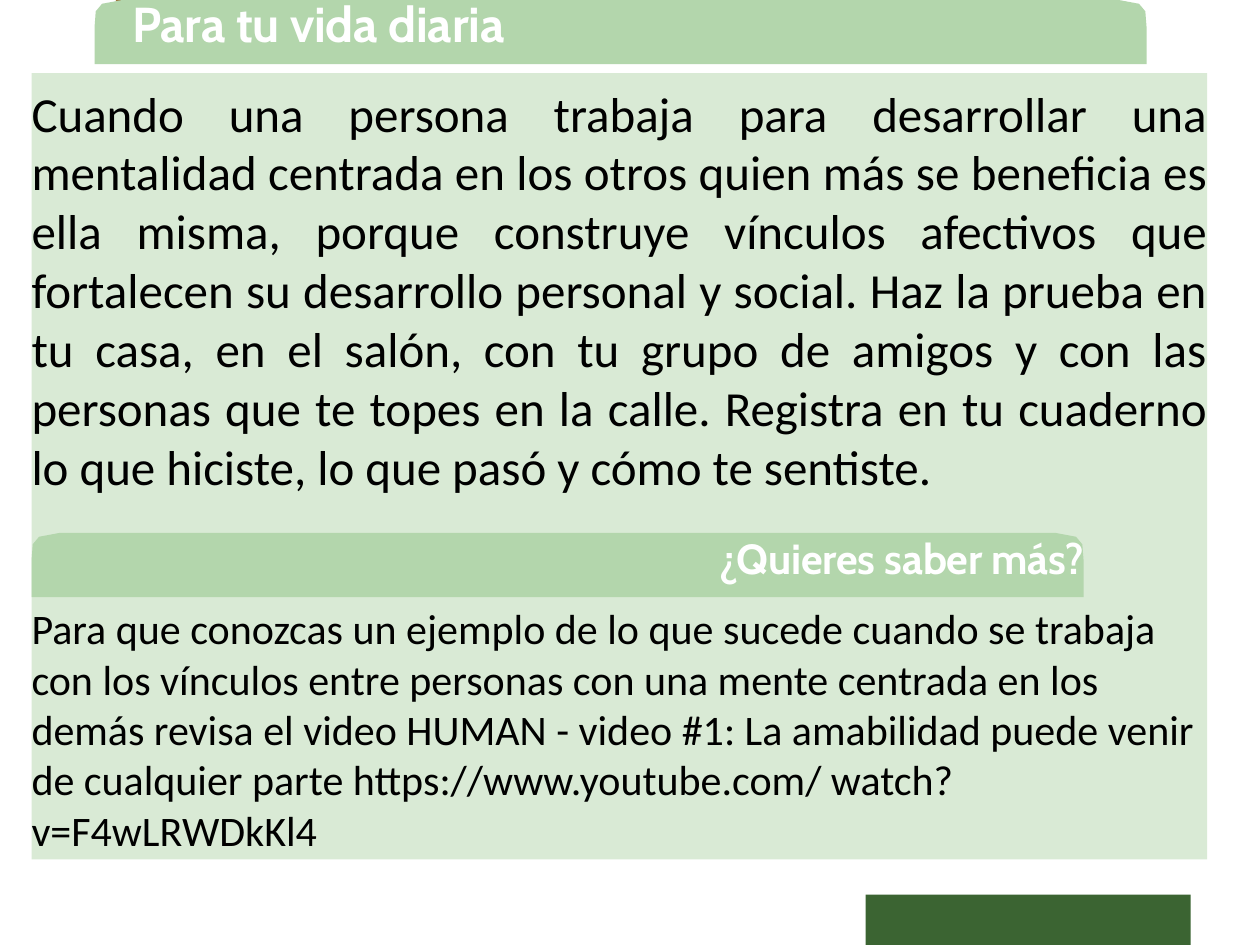
from lxml import etree
from pptx import Presentation
from pptx.dml.color import RGBColor
from pptx.enum.shapes import MSO_SHAPE
from pptx.enum.text import MSO_ANCHOR, MSO_AUTO_SIZE, PP_ALIGN
from pptx.oxml.ns import qn
from pptx.util import Inches, Pt

RECT = MSO_SHAPE.RECTANGLE
TOP, NO_FIT = MSO_ANCHOR.TOP, MSO_AUTO_SIZE.NONE
LEFT, RIGHT, JUSTIFY = PP_ALIGN.LEFT, PP_ALIGN.RIGHT, PP_ALIGN.JUSTIFY

GOLD = RGBColor(0x9A, 0x74, 0x3A)
DARK_GREEN = RGBColor(0x3B, 0x64, 0x32)
TAB_GREEN = RGBColor(0xB3, 0xD6, 0xAC)
PALE_GREEN = RGBColor(0xD9, 0xEA, 0xD5)
WHITE = RGBColor(0xFF, 0xFF, 0xFF)
BLACK = RGBColor(0, 0, 0)

# Left edge of a tab, from its bottom corner up to the flat top
TAB_EDGE = [(0, 0.51), (0, 0.22), (0.01, 0.09), (0.06, 0.03), (0.22, 0), (0.52, 0)]

DAILY_LIFE = (
    "Cuando una persona trabaja para desarrollar una mentalidad centrada en los "
    "otros quien más se beneficia es ella misma, porque construye vínculos "
    "afectivos que fortalecen su desarrollo personal y social. Haz la prueba en tu "
    "casa, en el salón, con tu grupo de amigos y con las personas que te topes en "
    "la calle. Registra en tu cuaderno lo que hiciste, lo que pasó y cómo te "
    "sentiste."
)
LEARN_MORE = (
    "Para que conozcas un ejemplo de lo que sucede cuando se trabaja con los "
    "vínculos entre personas con una mente centrada en los demás revisa el video "
    "HUMAN - video #1: La amabilidad puede venir de cualquier parte "
    "https://www.youtube.com/ watch?v=F4wLRWDkKl4"
)


def write(p, text, size, font="Calibri", color=BLACK, bold=False, align=LEFT,
          before=0, spacing=0):
    pPr = p._p.get_or_add_pPr()
    pPr.set("marL", "0")
    pPr.set("indent", "0")
    etree.SubElement(pPr, qn("a:buNone"))
    p.alignment, p.space_before = align, Pt(before)
    r = p.add_run()
    r.text = text
    r.font.size, r.font.name, r.font.bold = Pt(size), font, bold
    r.font.color.rgb = color
    if spacing:
        r._r.get_or_add_rPr().set("spc", str(round(spacing * 100)))


def set_frame(s, left=0, top=0, right=0):
    tf = s.text_frame
    tf.word_wrap, tf.auto_size, tf.vertical_anchor = True, NO_FIT, TOP
    tf.margin_left, tf.margin_top = Inches(left), Inches(top)
    tf.margin_right, tf.margin_bottom = Inches(right), 0
    return tf


def paint(s, color):
    s.shadow.inherit = False
    s.fill.solid()
    s.fill.fore_color.rgb = color
    s.line.fill.background()
    return s


def place(s, x, y, w, h):
    s.left, s.top, s.width, s.height = (Inches(v) for v in (x, y, w, h))
    s.element.getparent().append(s.element)  # bring to front


def add_strip(slide, x, y, w, h, color):
    box = (Inches(v) for v in (x, y, w, h))
    paint(slide.shapes.add_shape(RECT, *box), color)


def add_tab(slide, x, y, w):
    offsets = TAB_EDGE + [(w - dx, dy) for dx, dy in reversed(TAB_EDGE)]
    points = [(Inches(x + dx), Inches(y + dy)) for dx, dy in offsets]
    outline = slide.shapes.build_freeform(*points[0])
    outline.add_line_segments(points[1:], close=True)
    return paint(outline.convert_to_shape(), TAB_GREEN)


def add_header(slide, x, y, w):
    add_tab(slide, x, y, w)
    title = slide.shapes.title
    place(title, x + 0.28, y - 0.08, 5.63, 0.49)
    tf = set_frame(title, left=0.02, top=0.03)
    write(tf.paragraphs[0], "Para tu vida diaria", 28, font="Cabin", color=WHITE,
          bold=True, spacing=-0.1)


def add_body(slide, x, y, w, h):
    body = slide.placeholders[1]
    place(body, x, y, w, h)
    body.fill.solid()
    body.fill.fore_color.rgb = PALE_GREEN
    tf = set_frame(body, top=0.08)
    write(tf.paragraphs[0], DAILY_LIFE, 28, align=JUSTIFY)
    # The gap leaves room for the second tab
    write(tf.add_paragraph(), LEARN_MORE, 24, before=61.5)


def add_learn_more_tab(slide, x, y, w):
    tf = set_frame(add_tab(slide, x, y, w), left=0.02)
    write(tf.paragraphs[0], "¿Quieres saber más?", 24, font="Cabin", color=WHITE,
          bold=True, align=RIGHT, spacing=-0.1)


def main():
    prs = Presentation()
    prs.slide_width, prs.slide_height = Inches(10), Inches(7.5)
    slide = prs.slides.add_slide(prs.slide_layouts[1])

    # Strips at the top and bottom edges
    add_strip(slide, 0.92, 0, 2.58, 0.41, GOLD)
    add_strip(slide, 6.87, 7.1, 2.58, 0.4, DARK_GREEN)

    # Header, text panel and the tab inside it
    add_header(slide, 0.75, 0, 8.35)
    add_body(slide, 0.25, 0.58, 9.33, 6.24)
    add_learn_more_tab(slide, 0.25, 4.23, 8.35)

    prs.save("out.pptx")


if __name__ == "__main__":
    main()
